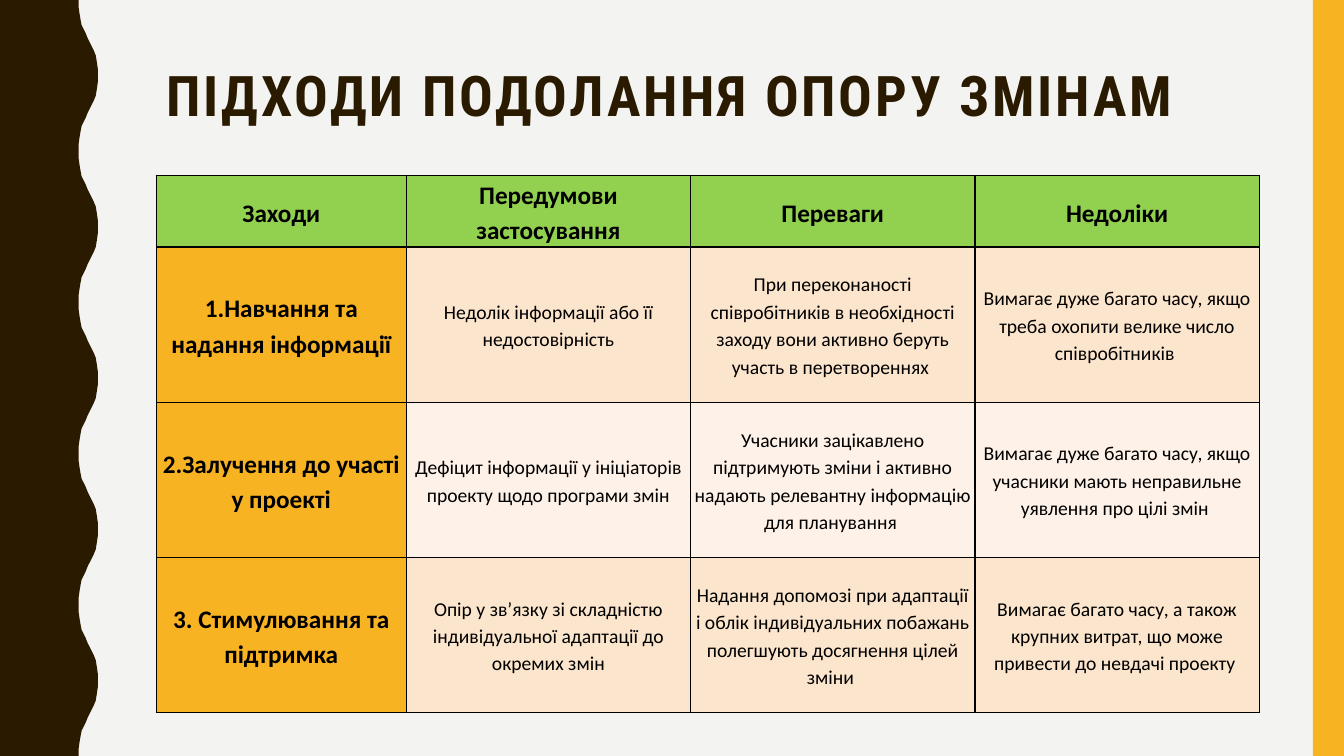
from lxml import etree
from pptx import Presentation
from pptx import util as u
from pptx.dml.color import RGBColor
from pptx.enum import shapes, text
from pptx.oxml import ns

PX = 9144
WIDTH, HEIGHT = 1333, 750
BACKGROUND = RGBColor(0xF3, 0xF3, 0xF2)
BROWN = RGBColor(0x2A, 0x1A, 0x00)
AMBER = RGBColor(0xF8, 0xB3, 0x23)
GREEN = RGBColor(0x92, 0xD0, 0x50)
PEACH = RGBColor(0xFC, 0xE5, 0xCD)
CREAM = RGBColor(0xFE, 0xF2, 0xE8)
BLACK = RGBColor(0, 0, 0)

WAVE_PERIOD = 150
HALF_WAVE = [
    (78, 0), (78, 7), (79, 14), (80, 20), (81, 25), (83, 29), (85, 33), (87, 38),
    (89, 42), (91, 46), (93, 50), (95, 55), (96, 61), (97, 68), (97, 75),
]
COLUMNS = [248, 282, 282, 282]
ROWS = [71, 154, 154, 154]
APPROACHES = [
    ["Заходи", "Передумови застосування", "Переваги", "Недоліки"],
    ["1.Навчання та надання інформації",
     "Недолік інформації або її недостовірність",
     "При переконаності співробітників в необхідності заходу вони активно беруть участь в перетвореннях ",
     "Вимагає дуже багато часу, якщо треба охопити велике число співробітників "],
    ["2.Залучення до участі у проекті",
     "Дефіцит інформації у ініціаторів проекту щодо програми змін",
     "Учасники зацікавлено підтримують зміни і активно надають релевантну інформацію для планування ",
     "Вимагає дуже багато часу, якщо учасники мають неправильне уявлення про цілі змін "],
    ["3. Стимулювання та підтримка",
     "Опір у зв’язку зі складністю індивідуальної адаптації до окремих змін",
     "Надання допомозі при адаптації і облік індивідуальних побажань полегшують досягнення цілей зміни ",
     "Вимагає багато часу, а також крупних витрат, що може привести до невдачі проекту "],
]


def px(*lengths):
    return [u.Emu(n * PX) for n in lengths]


def write(tf, words, size=14, font="Calibri", color=BLACK, bold=False,
          align=text.PP_ALIGN.CENTER, line=1.15, tracking=0):
    p = tf.paragraphs[0]
    p.alignment = align
    p.line_spacing = line
    r = p.add_run()
    r.text = words
    r.font.size = u.Pt(size)
    r.font.name = font
    r.font.bold = bold
    r.font.color.rgb = color
    if tracking:
        r.font._element.set("spc", str(tracking * 100))


def paint(sp, color):
    sp.shadow.inherit = False
    sp.fill.solid()
    sp.fill.fore_color.rgb = color
    sp.line.fill.background()


def add_wave(s):
    cycle = HALF_WAVE + [(x, WAVE_PERIOD - y) for x, y in HALF_WAVE[-2::-1]]
    edge = [(x, top + y) for top in range(0, HEIGHT, WAVE_PERIOD) for x, y in cycle]
    builder = s.shapes.build_freeform(0, 0, scale=PX)
    builder.add_line_segments(edge + [(0, HEIGHT)], close=True)
    paint(builder.convert_to_shape(), BROWN)


def add_bar(s, x, y, w, h, color):
    paint(s.shapes.add_shape(shapes.MSO_SHAPE.RECTANGLE, *px(x, y, w, h)), color)


def add_title(s, words):
    sp = s.shapes.title
    sp.left, sp.top, sp.width, sp.height = px(155, 60, 1113, 75)
    tf = sp.text_frame
    tf.auto_size = text.MSO_AUTO_SIZE.NONE
    tf.vertical_anchor = text.MSO_ANCHOR.MIDDLE
    write(tf, words, size=40, font="Roboto Condensed", color=BROWN, bold=True,
          align=text.PP_ALIGN.LEFT, line=0.9, tracking=2)


def add_borders(cell):
    props = cell._tc.get_or_add_tcPr()
    for i, side in enumerate(("lnL", "lnR", "lnT", "lnB")):
        ln = etree.Element(ns.qn("a:" + side), w=str(u.Pt(1)))
        fill = etree.SubElement(ln, ns.qn("a:solidFill"))
        etree.SubElement(fill, ns.qn("a:srgbClr"), val=str(BLACK))
        props.insert(i, ln)


def cell_color(row, col):
    if row == 0:
        return GREEN
    if col == 0:
        return AMBER
    return PEACH if row % 2 else CREAM


def add_approaches(s, x, y):
    frame = s.shapes.add_table(len(ROWS), len(COLUMNS),
                               *px(x, y, sum(COLUMNS), sum(ROWS)))
    table = frame.table
    table.first_row = table.horz_banding = False
    for column, width in zip(table.columns, px(*COLUMNS)):
        column.width = width
    for row, height in zip(table.rows, px(*ROWS)):
        row.height = height
    for i, entries in enumerate(APPROACHES):
        for j, words in enumerate(entries):
            cell = table.cell(i, j)
            heading = i == 0 or j == 0
            cell.margin_left, cell.margin_right, cell.margin_top, cell.margin_bottom = px(3, 3, 0, 0)
            cell.vertical_anchor = text.MSO_ANCHOR.MIDDLE
            cell.fill.solid()
            cell.fill.fore_color.rgb = cell_color(i, j)
            add_borders(cell)
            write(cell.text_frame, words, size=18 if heading else 14, bold=heading)


def main():
    prs = Presentation()
    prs.slide_width, prs.slide_height = px(WIDTH, HEIGHT)
    s = prs.slides.add_slide(prs.slide_layouts[5])
    s.background.fill.solid()
    s.background.fill.fore_color.rgb = BACKGROUND
    add_wave(s)
    add_bar(s, 1302, 0, 31, HEIGHT, AMBER)
    add_title(s, "ПІДХОДИ ПОДОЛАННЯ ОПОРУ ЗМІНАМ")
    add_approaches(s, 155, 174)
    prs.save("out.pptx")


if __name__ == "__main__":
    main()
